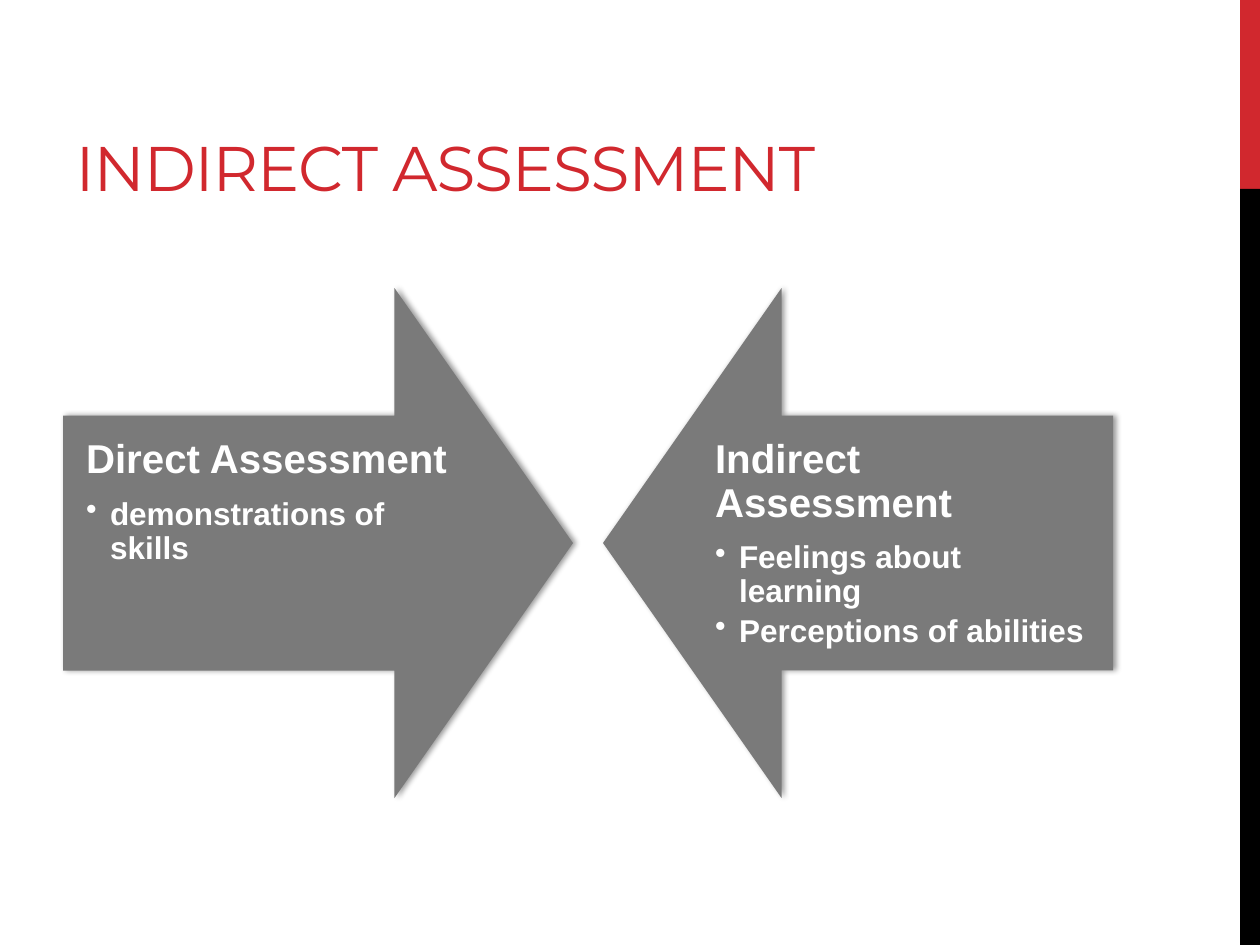
from dataclasses import dataclass

from lxml.etree import SubElement
from pptx import Presentation
from pptx.dml.color import RGBColor
from pptx.enum.shapes import MSO_SHAPE as Shape
from pptx.enum.text import MSO_ANCHOR as Anchor, MSO_AUTO_SIZE as AutoSize, PP_ALIGN as Align
from pptx.oxml.ns import qn
from pptx.util import Emu, Pt

RED, BLACK, GRAY, WHITE = "D1282E", "000000", "7A7A7A", "FFFFFF"
PX_PER_INCH = 126
ARROW_TOP, ARROW_SIZE = 288, 510
TEXT_TOP, TEXT_WIDTH, TEXT_HEIGHT, TEXT_INSET = 416, 421, 255, 23
BULLET_INDENT = 24


@dataclass
class Bar:
    top: int
    height: int
    color: str


@dataclass
class Arrow:
    left: int
    text_left: int
    rotation: int
    heading: str
    bullets: list[str]


BARS = [Bar(0, 189, RED), Bar(189, 756, BLACK)]
ARROWS = [
    Arrow(63, 63, 270, "Direct Assessment", ["demonstrations of skills"]),
    Arrow(603, 692, 90, "Indirect Assessment",
          ["Feelings about learning", "Perceptions of abilities"]),
]


def px(length: int) -> Emu:
    return Emu(round(length * 914400 / PX_PER_INCH))


def rgb(color: str) -> RGBColor:
    return RGBColor.from_string(color)


def add_filled(slide, kind: Shape, bounds: tuple[int, ...], color: str):
    shape = slide.shapes.add_shape(kind, *map(px, bounds))
    shape.shadow.inherit = False
    shape.fill.solid()
    shape.fill.fore_color.rgb = rgb(color)
    shape.line.fill.background()
    return shape


def set_font(paragraph, name: str, size: int, color: str, bold: bool) -> None:
    font = paragraph.font
    font.name, font.size, font.bold = name, Pt(size), bold
    font.color.rgb = rgb(color)


def add_shadow(shape) -> None:
    effects = shape._element.spPr.find(qn("a:effectLst"))
    shadow = SubElement(effects, qn("a:outerShdw"), blurRad=str(Pt(3.1)),
                        dist=str(Pt(1.8)), dir="0", rotWithShape="0")
    color = SubElement(shadow, qn("a:srgbClr"), val=BLACK)
    SubElement(color, qn("a:alpha"), val="40000")


def add_bullet(paragraph) -> None:
    properties = paragraph._p.get_or_add_pPr()
    properties.set("marL", str(px(BULLET_INDENT)))
    properties.set("indent", str(-px(BULLET_INDENT)))
    SubElement(properties, qn("a:buChar"), char="•")


def write_title(slide) -> None:
    title = slide.shapes.title
    title.left, title.top, title.width, title.height = map(px, (63, 21, 798, 189))
    frame = title.text_frame
    frame.text = "INDIRECT ASSESSMENT"
    frame.auto_size = AutoSize.NONE
    frame.vertical_anchor = Anchor.BOTTOM
    paragraph = frame.paragraphs[0]
    paragraph.alignment = Align.LEFT
    set_font(paragraph, "Montserrat", 36, RED, False)
    paragraph._p.pPr.find(qn("a:defRPr")).set("spc", "-60")


def draw_arrow(slide, arrow: Arrow) -> None:
    shape = add_filled(slide, Shape.DOWN_ARROW,
                       (arrow.left, ARROW_TOP, ARROW_SIZE, ARROW_SIZE), GRAY)
    shape.adjustments[0], shape.adjustments[1] = 0.5, 0.35
    shape.rotation = arrow.rotation
    add_shadow(shape)

    # Heading and bullets over the arrow
    box = slide.shapes.add_textbox(
        *map(px, (arrow.text_left, TEXT_TOP, TEXT_WIDTH, TEXT_HEIGHT)))
    frame = box.text_frame
    frame.word_wrap = True
    frame.margin_left = frame.margin_right = px(TEXT_INSET)
    frame.margin_top = frame.margin_bottom = px(TEXT_INSET)
    for index, text in enumerate([arrow.heading, *arrow.bullets]):
        paragraph = frame.add_paragraph() if index else frame.paragraphs[0]
        paragraph.text = text
        if index:
            paragraph.level = 1
            add_bullet(paragraph)
        paragraph.line_spacing = 0.9
        paragraph.space_after = Pt(3 if index else 9)
        set_font(paragraph, "Arial", 18 if index else 23, WHITE, True)


def main() -> None:
    deck = Presentation()
    deck.slide_width, deck.slide_height = px(1260), px(945)
    slide = deck.slides.add_slide(deck.slide_layouts[5])

    # Bars along the right edge
    for bar in BARS:
        add_filled(slide, Shape.RECTANGLE, (1240, bar.top, 20, bar.height), bar.color)

    write_title(slide)

    # Two arrows that face each other
    for arrow in ARROWS:
        draw_arrow(slide, arrow)

    deck.save("out.pptx")


if __name__ == "__main__":
    main()
